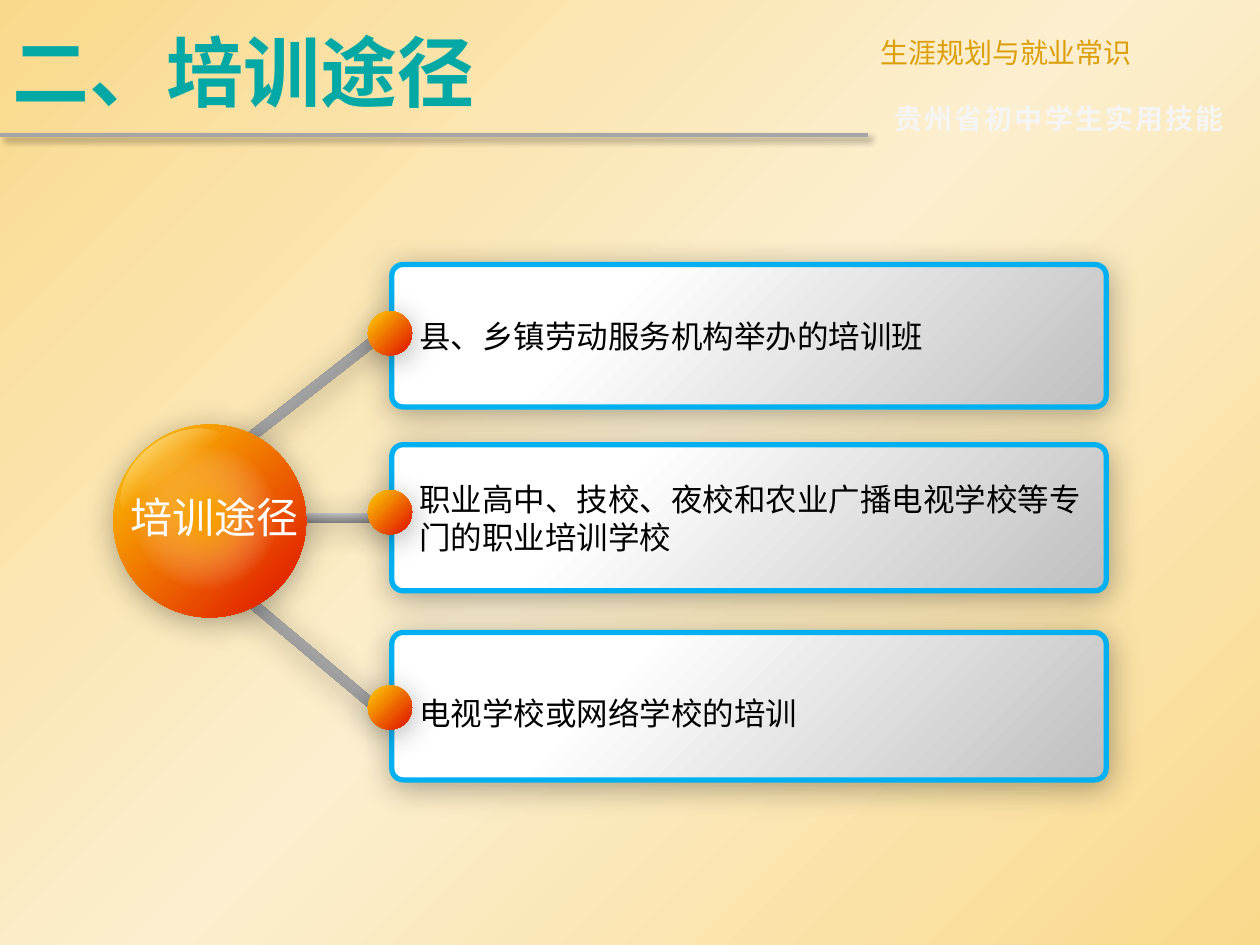
from lxml import etree
from pptx import Presentation
from pptx.dml.color import RGBColor
from pptx.enum.shapes import MSO_CONNECTOR, MSO_SHAPE
from pptx.enum.text import MSO_ANCHOR, MSO_AUTO_SIZE, PP_ALIGN
from pptx.oxml.ns import qn
from pptx.util import Inches, Pt

ELLIPSE, ROUNDED = MSO_SHAPE.OVAL, MSO_SHAPE.ROUNDED_RECTANGLE
TOP, MIDDLE = MSO_ANCHOR.TOP, MSO_ANCHOR.MIDDLE
LEFT, CENTER, JUSTIFY = PP_ALIGN.LEFT, PP_ALIGN.CENTER, PP_ALIGN.JUSTIFY
FONT = "Noto Sans CJK SC"

TITLE = "二、培训途径"
COURSE = "生涯规划与就业常识"
SERIES = "贵州省初中学生实用技能"
HUB = "培训途径"
BRANCHES = [
    dict(text="县、乡镇劳动服务机构举办的培训班", panel=(2.1, 1.13),
         label=(2.47, 0.4), dot=2.47, bar=(1.33, 3.19, 1.93), turn=322),
    dict(text="职业高中、技校、夜校和农业广播电视学校等专门的职业培训学校", panel=(3.53, 1.16),
         label=(3.76, 0.71), dot=3.89, bar=(1.47, 4.07, 1.68), turn=0),
    dict(text="电视学校或网络学校的培训", panel=(5.02, 1.17),
         label=(5.46, 0.4), dot=5.44, bar=(1.31, 4.98, 1.93), turn=40),
]

PAGE_STOPS = [(0, "F9D98C", 100), (50, "FCEFCF", 100), (100, "F9D98C", 100)]
BAR_STOPS = [(0, "808080", 100), (100, "BFBFBF", 100)]
PANEL_STOPS = [(30, "FFFFFF", 100), (100, "BFBFBF", 100)]
BALL_STOPS = [(0, "FFCF01", 100), (90, "E22000", 100)]
SHINE_STOPS = [(0, "FFFFFF", 100), (45, "FFFFFF", 0)]
GLOW_STOPS = [(10, "FFC000", 60), (70, "FFFFFF", 0)]
SOFT_SHADOW = dict(opacity=33, blur=17.8, distance=3, angle=87)
RULE_SHADOW = dict(opacity=40, blur=4, distance=3, angle=45)


def color(value):
    """Turn a hex string into a colour."""
    return RGBColor.from_string(value)


def add_color(parent, value, opacity):
    """Append a colour with an opacity in percent."""
    node = etree.SubElement(parent, qn("a:srgbClr"), val=value)
    if opacity < 100:
        etree.SubElement(node, qn("a:alpha"), val=str(opacity * 1000))


def set_gradient(fill, holder, stops, angle=None):
    """Fill with a linear gradient, or a round one when no angle is given."""
    fill.solid()
    gradient = etree.Element(qn("a:gradFill"), rotWithShape="1")
    stop_list = etree.SubElement(gradient, qn("a:gsLst"))
    for position, value, opacity in stops:
        stop = etree.SubElement(stop_list, qn("a:gs"), pos=str(position * 1000))
        add_color(stop, value, opacity)
    if angle is None:
        path = etree.SubElement(gradient, qn("a:path"), path="circle")
        sides = dict.fromkeys("ltrb", "50000")
        etree.SubElement(path, qn("a:fillToRect"), **sides)
    else:
        etree.SubElement(gradient, qn("a:lin"), ang=str(angle * 60000), scaled="0")
    holder.replace(holder.find(qn("a:solidFill")), gradient)


def set_shadow(shape, opacity=0, blur=0, distance=0, angle=0):
    """Give a shape its own shadow, or none."""
    effects = etree.SubElement(shape.element.spPr, qn("a:effectLst"))
    if opacity:
        outer = etree.SubElement(
            effects, qn("a:outerShdw"), blurRad=str(Pt(blur)), dist=str(Pt(distance)),
            dir=str(angle * 60000), algn="ctr", rotWithShape="0")
        add_color(outer, "000000", opacity)


def add_shape(shapes, kind, place, stops, angle=None, turn=0, corner=None,
              outline=None, shadow=SOFT_SHADOW):
    """Add a gradient-filled preset shape."""
    shape = shapes.add_shape(kind, *map(Inches, place))
    shape.rotation = turn
    if corner is not None:
        shape.adjustments[0] = corner
    set_gradient(shape.fill, shape.element.spPr, stops, angle)
    if outline:
        shape.line.color.rgb = color(outline)
        shape.line.width = Pt(3)
    else:
        shape.line.fill.background()
    set_shadow(shape, **shadow)


def add_text(shapes, text, place, size, fill, bold=False, align=LEFT, anchor=TOP,
             grow=True, spacing=0):
    """Add a wrapped text box holding one paragraph."""
    box = shapes.add_textbox(*map(Inches, place))
    frame = box.text_frame
    frame.word_wrap = True
    frame.auto_size = MSO_AUTO_SIZE.SHAPE_TO_FIT_TEXT if grow else MSO_AUTO_SIZE.NONE
    frame.vertical_anchor = anchor
    para = frame.paragraphs[0]
    para.alignment = align
    span = para.add_run()
    span.text = text
    span.font.size = Pt(size)
    span.font.bold = bold
    span.font.name = FONT
    span.font.color.rgb = color(fill)
    properties = span.font._element
    etree.SubElement(properties, qn("a:ea"), typeface=FONT)
    if spacing:
        properties.set("spc", str(int(spacing * 100)))


def add_header(page):
    """Add the title, the rule and the two course lines."""
    rule = page.shapes.add_connector(
        MSO_CONNECTOR.STRAIGHT, Inches(0), Inches(1.07), Inches(6.89), Inches(1.07))
    rule.line.color.rgb = color("A6A6A6")
    rule.line.width = Pt(2.25)
    set_shadow(rule, **RULE_SHADOW)
    add_text(page.shapes, COURSE, (6.89, 0.23, 3.11, 0.37), 16, "DC9F0C", align=JUSTIFY)
    add_text(page.shapes, SERIES, (7, 0.76, 3, 0.37), 16, "F5F5F5", bold=True, spacing=1.3)
    add_text(page.shapes, TITLE, (0, 0.05, 6.89, 1.02), 44, "04A8A4", bold=True,
             anchor=MIDDLE, grow=False)


def add_branch(page, text, panel, label, dot, bar, turn):
    """Add one bar, panel, label and dot as a group."""
    shapes = page.shapes.add_group_shape().shapes
    add_shape(shapes, ROUNDED, (*bar, 0.08), BAR_STOPS, 270, turn=turn, corner=0.5)
    add_shape(shapes, ROUNDED, (3.11, panel[0], 5.67, panel[1]), PANEL_STOPS, 45,
              corner=0.078, outline="00B0F0")
    add_text(shapes, text, (3.23, label[0], 5.55, label[1]), 18, "000000")
    add_shape(shapes, ELLIPSE, (2.92, dot, 0.35, 0.35), BALL_STOPS, 45)


def add_hub(page):
    """Add the glossy ball with its caption."""
    shapes = page.shapes.add_group_shape().shapes
    add_shape(shapes, ELLIPSE, (0.9, 3.37, 1.53, 1.53), BALL_STOPS, 45)
    add_shape(shapes, ELLIPSE, (0.91, 3.46, 1.04, 0.74), SHINE_STOPS, 90, turn=323.1, shadow={})
    add_shape(shapes, ELLIPSE, (1.05, 3.53, 1.16, 1.16), GLOW_STOPS, shadow={})
    add_text(shapes, HUB, (0.92, 3.85, 1.57, 0.5), 24, "FFFFFF", align=CENTER, anchor=MIDDLE)


def main():
    """Build and save the slide."""
    deck = Presentation()
    deck.slide_width, deck.slide_height = Inches(10), Inches(7.5)
    page = deck.slides.add_slide(deck.slide_layouts[6])
    fill = page.background.fill
    fill.solid()
    set_gradient(fill, page.element.find(".//" + qn("p:bgPr")), PAGE_STOPS, 45)
    add_header(page)
    for branch in BRANCHES:
        add_branch(page, **branch)
    add_hub(page)
    deck.save("out.pptx")


if __name__ == "__main__":
    main()
